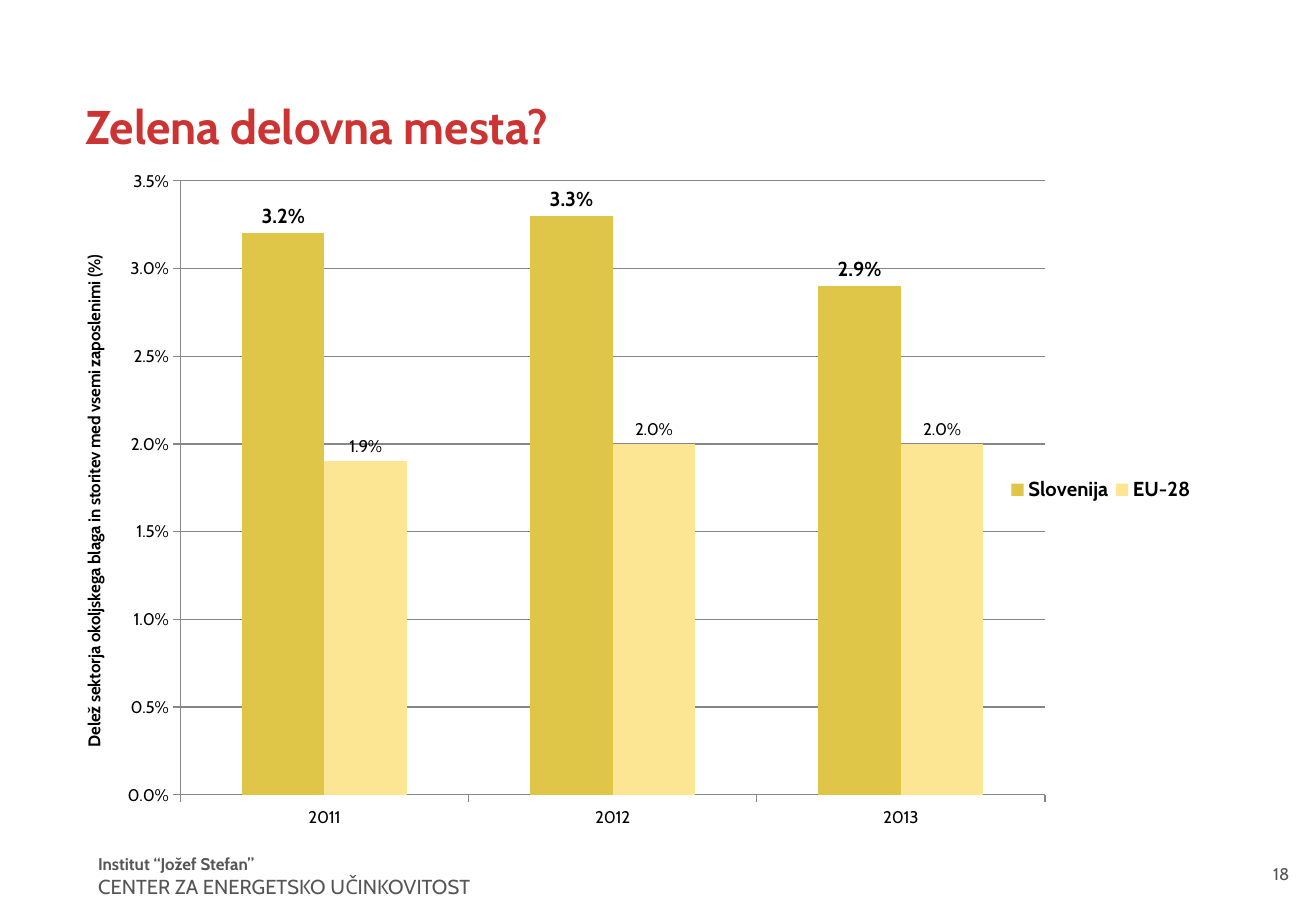
from lxml import etree
from pptx import Presentation
from pptx.chart.data import CategoryChartData
from pptx.dml.color import RGBColor
from pptx.enum.chart import XL_CHART_TYPE as ChartType, XL_LABEL_POSITION as LabelPosition
from pptx.enum.chart import XL_LEGEND_POSITION as LegendPosition, XL_TICK_MARK as TickMark
from pptx.enum.text import MSO_ANCHOR as Anchor, PP_ALIGN as Align
from pptx.oxml.ns import qn
from pptx.util import Inches, Pt

FONT = "Cabin"
COLORS = {
    "white": "FFFFFF",
    "black": "000000",
    "title": "CC3333",
    "footer": "555555",
    "line": "868686",
    "Slovenija": "DFC648",
    "EU-28": "FCE694",
}
YEARS = ["2011", "2012", "2013"]
SHARES = {
    "Slovenija": [0.032, 0.033, 0.029],
    "EU-28": [0.019, 0.02, 0.02],
}
AXIS_TITLE = "Delež sektorja okoljskega blaga in storitev med vsemi zaposlenimi (%)"


def color(name):
    return RGBColor.from_string(COLORS[name])


def style_font(font, size, tint="black", bold=False):
    font.name = FONT
    font.size = Pt(size)
    font.bold = bold
    font.color.rgb = color(tint)


def add_text(page, box, lines, tint, align=Align.LEFT):
    shape = page.shapes.add_textbox(*map(Inches, box))
    frame = shape.text_frame
    frame.word_wrap = True
    for index, (text, size, bold) in enumerate(lines):
        para = frame.paragraphs[0] if index == 0 else frame.add_paragraph()
        para.text = text
        para.alignment = align
        style_font(para.font, size, tint, bold)
    return shape


def add_title(page, box):
    shape = add_text(page, box, [("Zelena delovna mesta?", 28, True)], "title")
    shape.fill.solid()
    shape.fill.fore_color.rgb = color("white")
    frame = shape.text_frame
    frame.vertical_anchor = Anchor.BOTTOM
    frame.margin_left = Inches(0.7)
    frame.margin_top = frame.margin_right = 0
    frame.margin_bottom = Inches(0.06)


def add_footer(page, box):
    left, top, width, height = box
    institute = [
        ("Institut “Jožef Stefan”", 10, True),
        ("CENTER ZA ENERGETSKO UČINKOVITOST", 12, False),
    ]
    add_text(page, (left, top, 3.8, height), institute, "footer")
    number_box = (left + width - 2.43, top + 0.08, 2.43, 0.44)
    add_text(page, number_box, [("18", 10, False)], "footer", Align.RIGHT)


def set_layout(parent, index, **places):
    for old in parent.findall(qn("c:layout")):
        parent.remove(old)
    layout = etree.Element(qn("c:layout"))
    manual = etree.SubElement(layout, qn("c:manualLayout"))
    for tag, value in places.items():
        etree.SubElement(manual, qn(f"c:{tag}")).set("val", str(value))
    parent.insert(index, layout)


def style_axes(chart):
    for axis in (chart.category_axis, chart.value_axis):
        axis.major_tick_mark = TickMark.OUTSIDE
        axis.minor_tick_mark = TickMark.NONE
        axis.format.line.color.rgb = color("line")
        axis.format.line.width = Pt(0.75)
        style_font(axis.tick_labels.font, 10)
    axis = chart.value_axis
    axis.minimum_scale = 0
    axis.maximum_scale = 0.035
    axis.major_unit = 0.005
    axis.tick_labels.number_format = "0.0%"
    axis.tick_labels.number_format_is_linked = False
    axis.has_major_gridlines = True
    axis.major_gridlines.format.line.color.rgb = color("line")
    axis.major_gridlines.format.line.width = Pt(0.75)
    title = axis.axis_title
    para = title.text_frame.paragraphs[0]
    para.text = AXIS_TITLE
    style_font(para.font, 10, bold=True)
    body = title._element.find(".//" + qn("a:bodyPr"))
    body.set("rot", "-5400000")
    body.set("vert", "horz")
    set_layout(title._element, 1, xMode="edge", yMode="edge", x=0.02, y=0.13)


def style_series(plot):
    plot.gap_width = 150
    plot.overlap = 0
    plot.vary_by_categories = False
    for series in plot.series:
        main = series.name == "Slovenija"
        series.format.fill.solid()
        series.format.fill.fore_color.rgb = color(series.name)
        labels = series.data_labels
        labels.show_value = True
        labels.number_format = "0.0%"
        labels.number_format_is_linked = False
        labels.position = LabelPosition.OUTSIDE_END
        style_font(labels.font, 12 if main else 10, bold=main)


def add_share_chart(page, box):
    data = CategoryChartData(number_format="0.0%")
    data.categories = YEARS
    for name, values in SHARES.items():
        data.add_series(name, values)
    frame = page.shapes.add_chart(ChartType.COLUMN_CLUSTERED, *map(Inches, box), data)
    chart = frame.chart
    chart.has_title = False
    style_font(chart.font, 10)
    style_axes(chart)
    style_series(chart.plots[0])
    plot_area = chart._chartSpace.chart.plotArea
    set_layout(plot_area, 0, layoutTarget="inner", xMode="edge", yMode="edge",
               x=0.109, y=0.025, w=0.757, h=0.909)
    chart.has_legend = True
    legend = chart.legend
    legend.position = LegendPosition.RIGHT
    legend.include_in_layout = False
    style_font(legend.font, 12, bold=True)
    set_layout(legend._element, 1, xMode="edge", yMode="edge",
               x=0.83, y=0.455, w=0.17, h=0.055)


def main():
    deck = Presentation()
    deck.slide_width = Inches(10.83)
    deck.slide_height = Inches(7.5)
    page = deck.slides.add_slide(deck.slide_layouts[6])
    add_footer(page, (0.71, 6.98, 10, 0.47))
    add_title(page, (0, 0, 10.83, 1.33))
    add_share_chart(page, (0.46, 1.35, 9.4, 5.56))
    deck.save("out.pptx")


if __name__ == "__main__":
    main()
